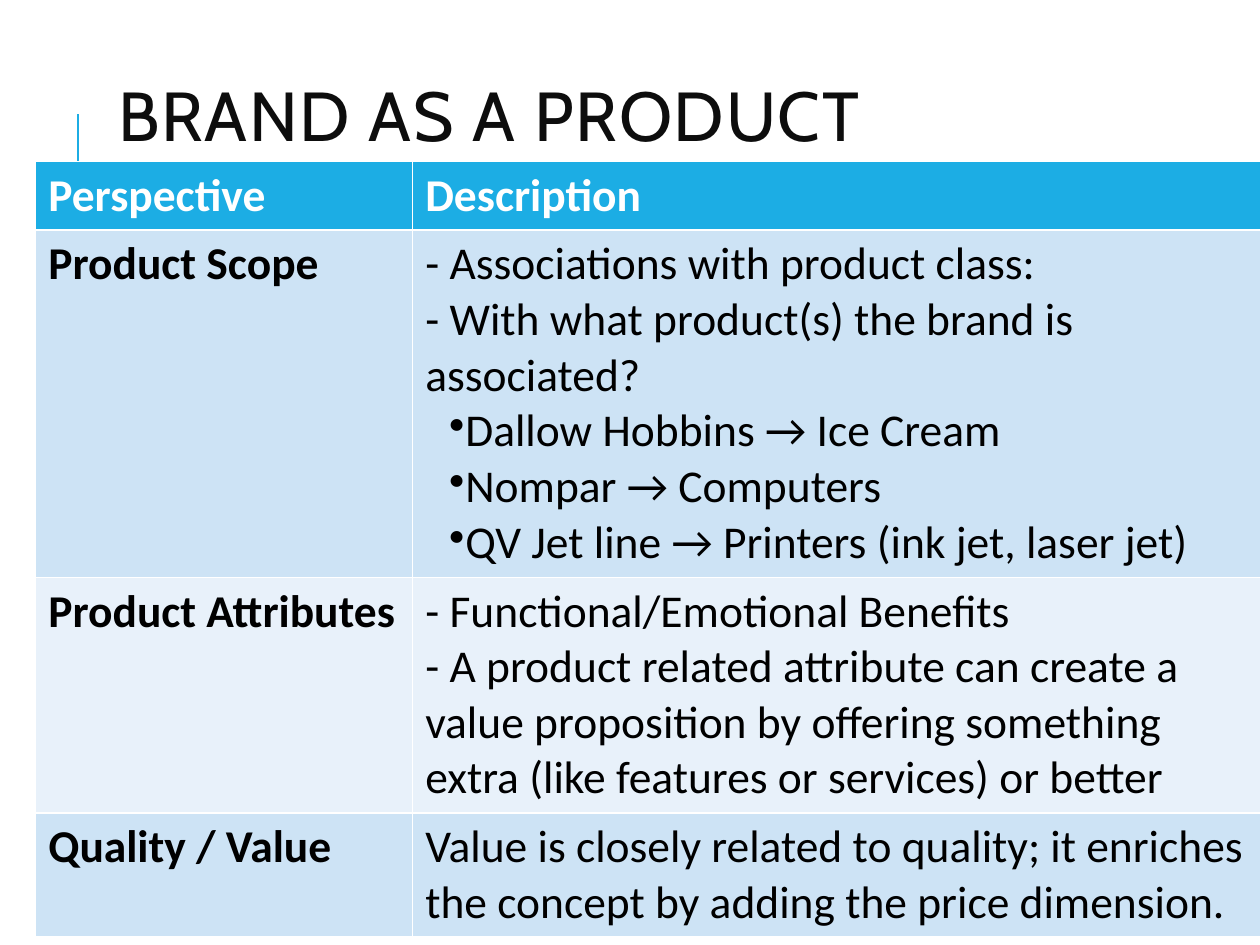
from dataclasses import dataclass

from lxml.etree import SubElement
from pptx import Presentation
from pptx.dml.color import RGBColor
from pptx.enum.shapes import MSO_CONNECTOR as Connector
from pptx.enum.text import MSO_ANCHOR as Anchor, MSO_AUTO_SIZE as AutoSize, PP_ALIGN as Align
from pptx.oxml.ns import qn
from pptx.util import Cm, Pt


@dataclass(frozen=True)
class Theme:
    accent: RGBColor = RGBColor(0x1C, 0xAD, 0xE4)
    band_dark: RGBColor = RGBColor(0xCD, 0xE3, 0xF5)
    band_light: RGBColor = RGBColor(0xE8, 0xF1, 0xFA)
    title_ink: RGBColor = RGBColor(0x0D, 0x0D, 0x0D)
    ink: RGBColor = RGBColor(0, 0, 0)
    white: RGBColor = RGBColor(0xFF, 0xFF, 0xFF)
    title_font: str = "Cabin"
    body_font: str = "Calibri"
    title_size: Pt = Pt(39.6)
    body_size: Pt = Pt(26)
    rule_width: Pt = Pt(1.5)


THEME = Theme()
BULLET = "•"
HEADER = ("Perspective", ["Description"])
PERSPECTIVES = [
    ("Product Scope", [
        "- Associations with product class:",
        "- With what product(s) the brand is associated?",
        "•Dallow Hobbins → Ice Cream",
        "•Nompar → Computers",
        "•QV Jet line → Printers (ink jet, laser jet)",
    ]),
    ("Product Attributes", [
        "- Functional/Emotional Benefits",
        "- A product related attribute can create a value proposition by "
        "offering something extra (like features or services) or better",
    ]),
    ("Quality / Value", [
        "Value is closely related to quality; it enriches the concept by "
        "adding the price dimension.",
    ]),
]
COLUMN_WIDTHS = (Cm(7.6), Cm(17.1))
ROW_HEIGHTS = (Cm(1.36), Cm(7), Cm(4.75), Cm(2.5))


def add_title(slide, text, left, top, width, height):
    title = slide.shapes.title
    title.left, title.top, title.width, title.height = left, top, width, height
    frame = title.text_frame
    frame.text = text
    frame.word_wrap = True
    frame.auto_size = AutoSize.NONE
    frame.vertical_anchor = Anchor.MIDDLE
    line = frame.paragraphs[0]
    line.alignment = Align.LEFT
    line.line_spacing = 0.8
    line.font.name = THEME.title_font
    line.font.size = THEME.title_size
    line.font.color.rgb = THEME.title_ink
    line.runs[0].font._element.set("spc", "100")


def add_title_rule(slide, left, top, height):
    rule = slide.shapes.add_connector(Connector.STRAIGHT, left, top + height, left, top)
    rule.line.color.rgb = THEME.accent
    rule.line.width = THEME.rule_width
    SubElement(rule._element.spPr, qn("a:effectLst"))


def set_bullet(paragraph):
    properties = paragraph._p.get_or_add_pPr()
    properties.set("marL", str(Cm(0.48)))
    properties.set("indent", "0")
    SubElement(properties, qn("a:buChar")).set("char", BULLET)


def fill_cell(cell, lines, fill, ink, bold):
    """Write the lines into the cell; those that start with a bullet are indented."""
    cell.fill.solid()
    cell.fill.fore_color.rgb = fill
    cell.text = "\n".join(line.removeprefix(BULLET) for line in lines)
    for paragraph, line in zip(cell.text_frame.paragraphs, lines):
        paragraph.alignment = Align.LEFT
        paragraph.font.name = THEME.body_font
        paragraph.font.size = THEME.body_size
        paragraph.font.bold = bold
        paragraph.font.color.rgb = ink
        if line.startswith(BULLET):
            set_bullet(paragraph)


def add_perspective_table(slide, left, top):
    rows = [HEADER, *PERSPECTIVES]
    table = slide.shapes.add_table(
        len(rows), len(COLUMN_WIDTHS), left, top, sum(COLUMN_WIDTHS), sum(ROW_HEIGHTS)
    ).table
    for column, width in zip(table.columns, COLUMN_WIDTHS):
        column.width = width
    for index, (perspective, description) in enumerate(rows):
        table.rows[index].height = ROW_HEIGHTS[index]
        is_header = index == 0
        band = THEME.band_dark if index % 2 else THEME.band_light
        fill = THEME.accent if is_header else band
        ink = THEME.white if is_header else THEME.ink
        fill_cell(table.cell(index, 0), [perspective], fill, ink, bold=True)
        fill_cell(table.cell(index, 1), description, fill, ink, bold=is_header)


def main():
    deck = Presentation()
    deck.slide_width, deck.slide_height = Cm(25.4), Cm(19.05)
    slide = deck.slides.add_slide(deck.slide_layouts[5])
    add_title_rule(slide, Cm(1.57), Cm(2.29), Cm(2.54))
    add_title(slide, "BRAND AS A PRODUCT", Cm(2.13), Cm(1.63), Cm(20.24), Cm(1.63))
    add_perspective_table(slide, Cm(0.72), Cm(3.26))
    deck.save("out.pptx")


if __name__ == "__main__":
    main()
